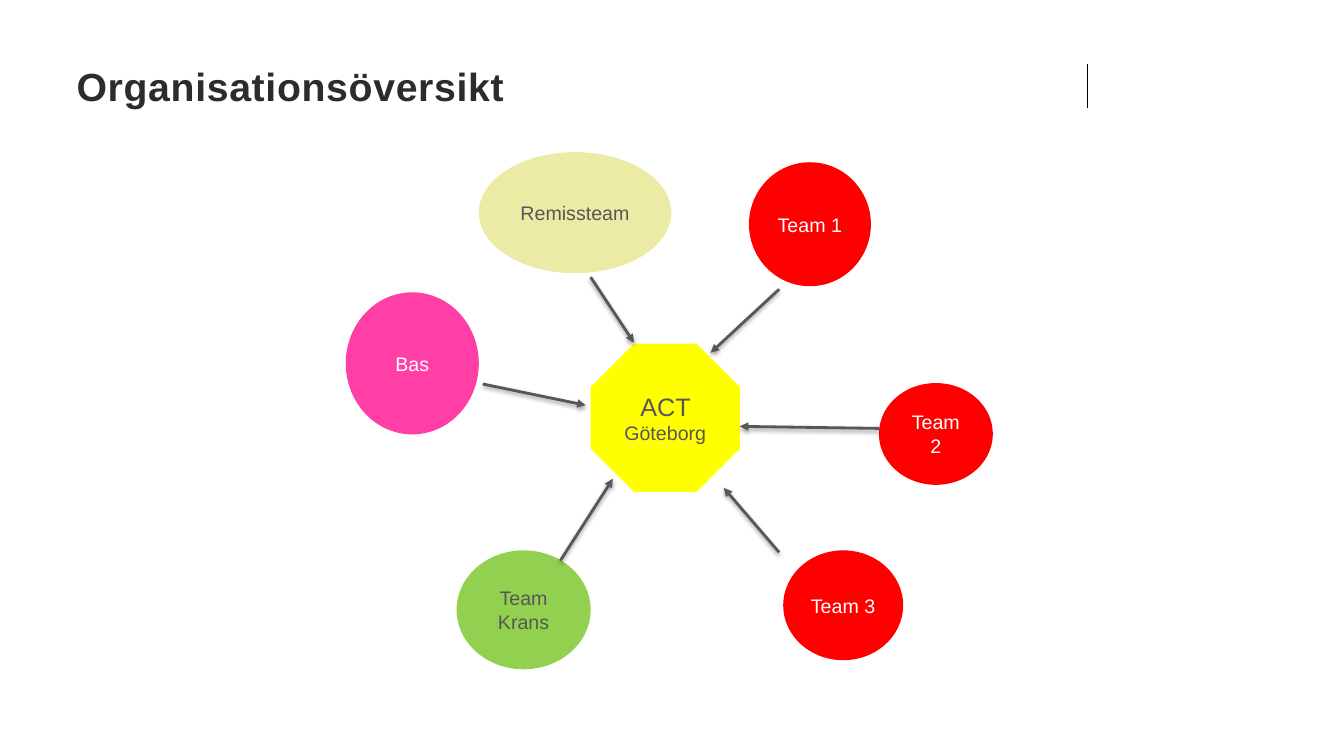
"""Build the organisation overview slide."""
from dataclasses import dataclass

from lxml import etree
from pptx import Presentation
from pptx import util as u
from pptx.dml.color import RGBColor
from pptx.enum import shapes, text
from pptx.oxml import parse_xml
from pptx.oxml.ns import qn

COLUMNS, ROWS = 80, 45
SLIDE_WIDTH, SLIDE_HEIGHT = u.Inches(13.333), u.Inches(7.5)


@dataclass(frozen=True)
class Theme:
    """Colours, font and type sizes of the slide."""
    font: str = "Arial"
    heading: str = "2C2C2C"
    dark: str = "575757"
    light: str = "FFFFFF"
    rule: str = "000000"
    hub: str = "FFFF00"
    team: str = "FF0000"
    krans: str = "92D050"
    bas: str = "FF3EA6"
    referral: str = "EBEBA5"
    heading_size: int = 28
    hub_size: int = 18
    label_size: int = 14


THEME = Theme()

SHADOW = (
    '<a:effectLst xmlns:a="http://schemas.openxmlformats.org/drawingml/2006/main">'
    '<a:outerShdw blurRad="40000" dist="20000" dir="5400000" rotWithShape="0">'
    '<a:srgbClr val="000000"><a:alpha val="38000"/></a:srgbClr>'
    '</a:outerShdw></a:effectLst>'
)

UNITS = [
    ("Team 1", (44.58, 9.66, 7.26, 7.38), THEME.team, THEME.light),
    ("Team 2", (52.32, 22.8, 6.78, 6.06), THEME.team, THEME.light),
    ("Team 3", (46.62, 32.76, 7.14, 6.54), THEME.team, THEME.light),
    ("Team Krans", (27.18, 32.76, 7.98, 7.08), THEME.krans, THEME.dark),
    ("Bas", (20.58, 17.4, 7.92, 8.46), THEME.bas, THEME.light),
    ("Remissteam", (28.5, 9.06, 11.46, 7.2), THEME.referral, THEME.dark),
]

ARROWS_TO_HUB = [
    ((35.16, 16.5), (37.74, 20.4)),
    ((46.38, 17.22), (42.3, 21)),
    ((52.32, 25.5), (44.04, 25.38)),
    ((28.74, 22.86), (34.86, 24.12)),
    ((33.36, 33.36), (36.48, 28.5)),
    ((46.38, 32.88), (43.08, 29.04)),
]


def grid(*cells):
    """Turn alternating columns and rows into slide lengths."""
    steps = (SLIDE_WIDTH / COLUMNS, SLIDE_HEIGHT / ROWS)
    return [round(cell * steps[i % 2]) for i, cell in enumerate(cells)]


def apply(target, formats):
    """Set each attribute of the target from a dict."""
    for name, value in formats.items():
        setattr(target, name, value)


def add_run(paragraph, words, size, colour, bold=False):
    """Add one formatted run and return it."""
    run = paragraph.add_run()
    run.text = words
    apply(run.font, {"name": THEME.font, "size": u.Pt(size), "bold": bold})
    run.font.color.rgb = RGBColor.from_string(colour)
    return run


def set_heading(slide, words):
    """Place and format the title placeholder."""
    heading = slide.shapes.title
    apply(heading, dict(zip(("left", "top", "width", "height"),
                            grid(4.56, 3.12, 58.98, 4.56))))
    apply(heading.text_frame, {
        "margin_left": 0, "margin_top": 0, "margin_right": 0, "margin_bottom": 0,
        "word_wrap": True, "auto_size": text.MSO_AUTO_SIZE.NONE,
        "vertical_anchor": text.MSO_ANCHOR.MIDDLE})
    paragraph = heading.text_frame.paragraphs[0]
    apply(paragraph, {"alignment": text.PP_ALIGN.LEFT, "line_spacing": u.Pt(27)})
    run = add_run(paragraph, words, THEME.heading_size, THEME.heading, bold=True)
    run.font._element.set("spc", "50")


def add_unit(slide, preset, place, fill, runs):
    """Add a filled shape with centred runs of words, size and colour."""
    unit = slide.shapes.add_shape(preset, *grid(*place))
    unit.shadow.inherit = False
    unit.fill.solid()
    unit.fill.fore_color.rgb = RGBColor.from_string(fill)
    unit.line.fill.background()
    apply(unit.text_frame, {"word_wrap": True,
                            "vertical_anchor": text.MSO_ANCHOR.MIDDLE})
    paragraph = unit.text_frame.paragraphs[0]
    paragraph.alignment = text.PP_ALIGN.CENTER
    for run in runs:
        add_run(paragraph, *run)


def add_line(slide, start, end, colour, weight):
    """Add a straight line and return it."""
    line = slide.shapes.add_connector(
        shapes.MSO_CONNECTOR.STRAIGHT, *grid(*start, *end))
    line.line.color.rgb = RGBColor.from_string(colour)
    line.line.width = u.Pt(weight)
    return line


def add_rule(slide, start, end):
    """Add a thin line without shadow."""
    rule = add_line(slide, start, end, THEME.rule, 1)
    etree.SubElement(rule._element.spPr, qn("a:effectLst"))


def add_arrow(slide, start, end):
    """Add a shadowed line with an arrowhead at its end."""
    arrow = add_line(slide, start, end, THEME.dark, 2)
    etree.SubElement(arrow.line._get_or_add_ln(), qn("a:tailEnd"), type="triangle")
    arrow._element.spPr.append(parse_xml(SHADOW))


def main():
    """Build and save the slide."""
    deck = Presentation()
    apply(deck, {"slide_width": SLIDE_WIDTH, "slide_height": SLIDE_HEIGHT})
    slide = deck.slides.add_slide(deck.slide_layouts.get_by_name("Title Only"))
    set_heading(slide, "Organisationsöversikt")
    add_rule(slide, (64.74, 3.84), (64.74, 6.42))
    add_unit(slide, shapes.MSO_SHAPE.OCTAGON, (35.16, 20.46, 8.88, 8.82), THEME.hub,
             [("ACT ", THEME.hub_size, THEME.dark),
              ("Göteborg", THEME.label_size, THEME.dark)])
    for label, place, fill, ink in UNITS:
        add_unit(slide, shapes.MSO_SHAPE.OVAL, place, fill,
                 [(label, THEME.label_size, ink)])
    for start, end in ARROWS_TO_HUB:
        add_arrow(slide, start, end)
    deck.save("out.pptx")


if __name__ == "__main__":
    main()
